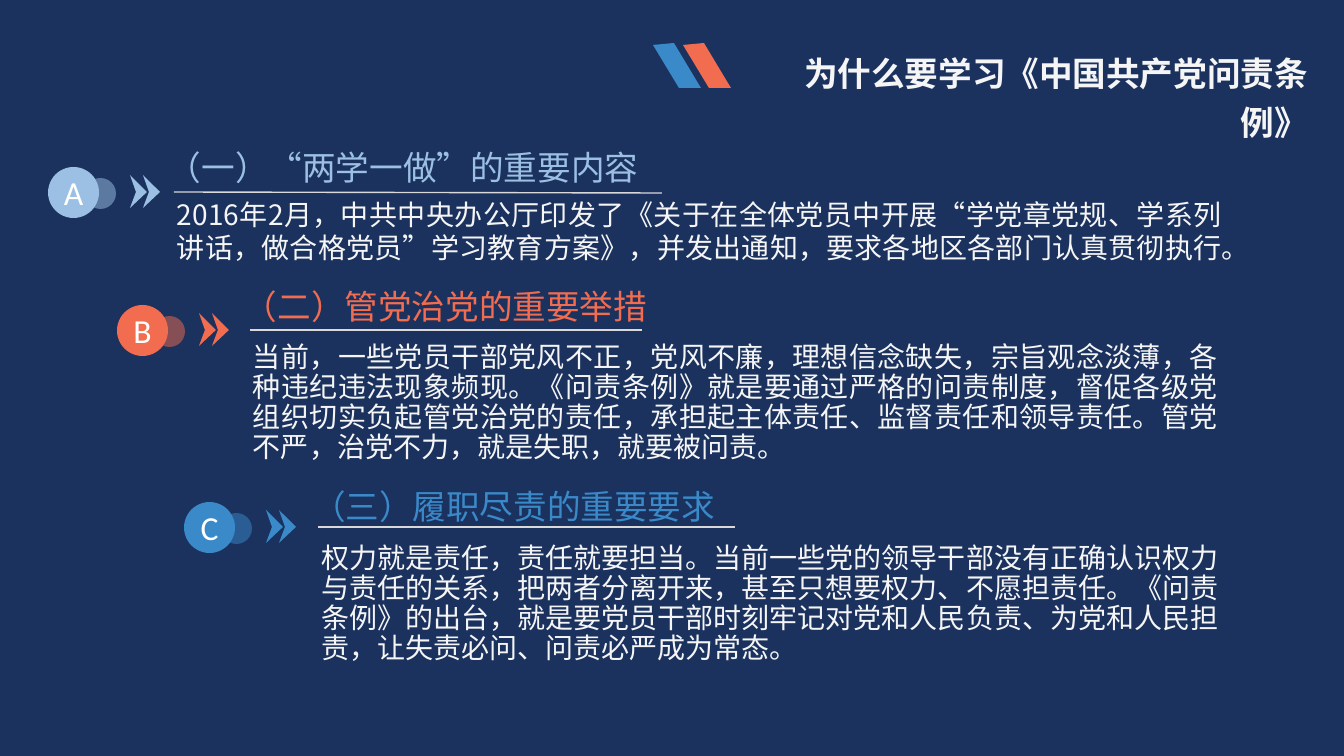
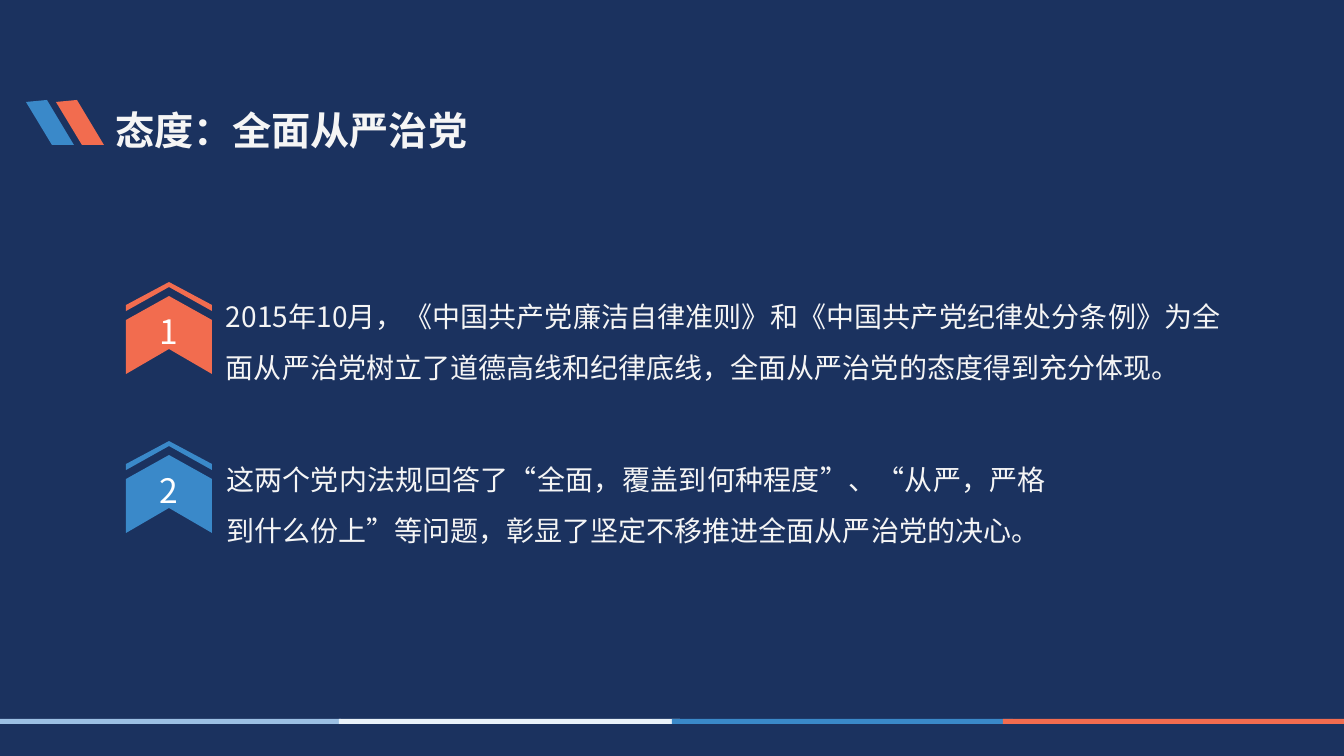
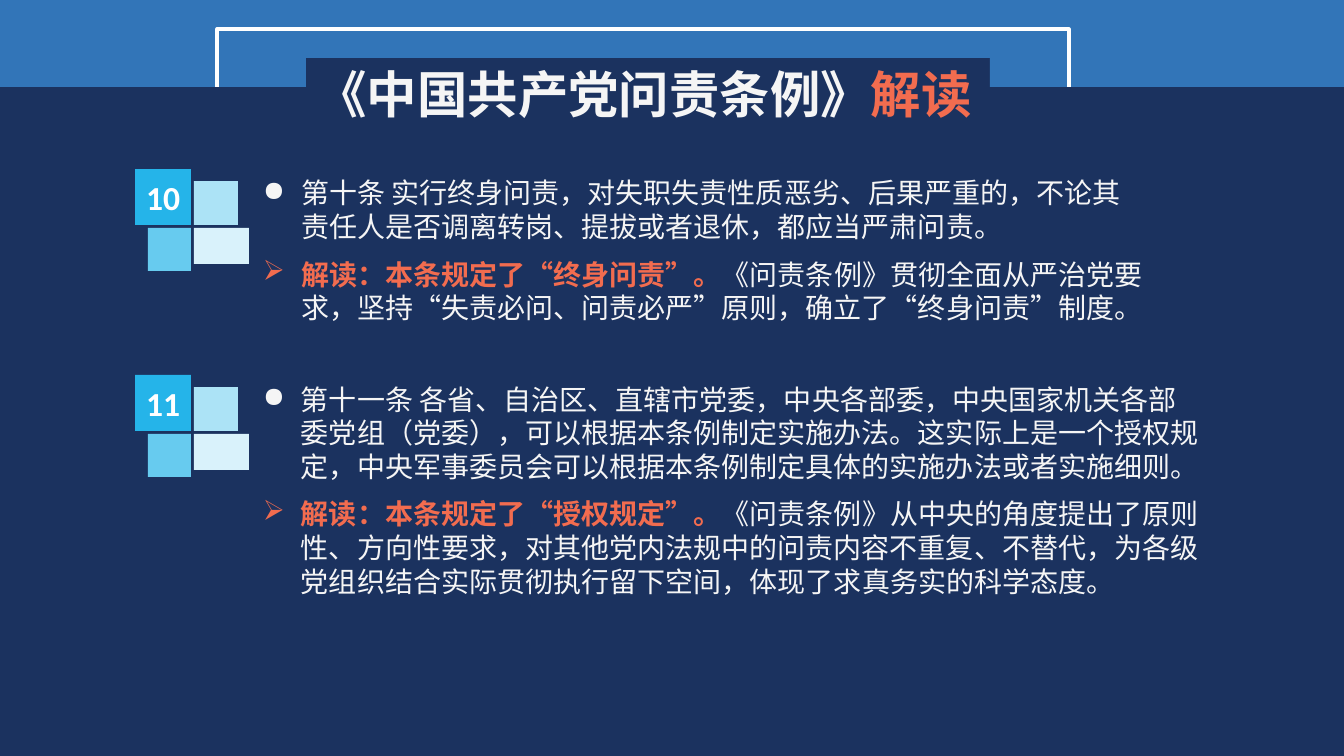
from lxml.etree import SubElement
from pptx import Presentation
from pptx.dml.color import RGBColor
from pptx.enum.shapes import MSO_CONNECTOR, MSO_SHAPE as SHAPE
from pptx.enum.text import MSO_ANCHOR as ANCHOR, PP_ALIGN as ALIGN
from pptx.oxml.ns import qn
from pptx.util import Pt

WIDTH, HEIGHT = 1344, 756
SCALE = 12192000 / WIDTH
COLORS = {
    "navy": "1B325F", "band": "3275B8", "pale": "9CC0E4", "ice": "E9F2F9",
    "blue": "3A89C9", "coral": "F26C4F", "text": "F5F5F5", "white": "FFFFFF",
    "rule": "D9D9D9", "tile1": "25B4E9", "tile2": "ACE3F6",
    "tile3": "67CBEF", "tile4": "D9F2FB",
}
LATIN, SANS, HEADING = "Calibri", "Noto Sans CJK SC", "Noto Sans CJK JP"


def emu(px):
    return round(px * SCALE)


def rgb(name):
    return RGBColor.from_string(COLORS[name])


class Deck:
    def __init__(self):
        self.presentation = Presentation()
        self.presentation.slide_width = emu(WIDTH)
        self.presentation.slide_height = emu(HEIGHT)
        self.slide = None

    def new_slide(self):
        self.slide = self.presentation.slides.add_slide(self.presentation.slide_layouts[6])
        fill = self.slide.background.fill
        fill.solid()
        fill.fore_color.rgb = rgb("navy")

    def paint(self, shape, color, alpha=None):
        shape.shadow.inherit = False
        shape.line.fill.background()
        shape.fill.solid()
        shape.fill.fore_color.rgb = rgb(color)
        if alpha:
            tint = shape.fill._xPr.find(qn("a:solidFill"))[0]
            SubElement(tint, qn("a:alpha")).set("val", str(alpha * 1000))
        return shape

    def shape(self, kind, x, y, w, h, color, alpha=None):
        shape = self.slide.shapes.add_shape(kind, emu(x), emu(y), emu(w), emu(h))
        return self.paint(shape, color, alpha)

    def outline(self, x, y, contours, close=True):
        builder = None
        for contour in contours:
            (left, top), *rest = [(x + dx, y + dy) for dx, dy in contour]
            if builder is None:
                builder = self.slide.shapes.build_freeform(left, top, SCALE)
            else:
                builder.move_to(left, top)
            builder.add_line_segments(rest, close=close)
        return builder.convert_to_shape()

    def polygon(self, x, y, color, *contours):
        return self.paint(self.outline(x, y, contours), color)

    def polyline(self, x, y, points, color, width):
        shape = self.outline(x, y, [points], close=False)
        shape.shadow.inherit = False
        shape.fill.background()
        shape.line.color.rgb = rgb(color)
        shape.line.width = Pt(width)

    def line(self, x1, y1, x2, y2):
        connector = self.slide.shapes.add_connector(
            MSO_CONNECTOR.STRAIGHT, emu(x1), emu(y1), emu(x2), emu(y2))
        connector.line.color.rgb = rgb("rule")
        connector.line.width = Pt(1)
        SubElement(connector._element.spPr, qn("a:effectLst"))

    def style(self, run, size, font, color, bold=False):
        run.font.size = Pt(size)
        run.font.bold = bold
        run.font.color.rgb = rgb(color)
        run.font.name = font
        properties = run._r.get_or_add_rPr()
        properties.set("lang", "zh-CN")
        SubElement(properties, qn("a:ea")).set("typeface", font)

    def label(self, shape, text, font, bold=False, insets=(0, 0, 0, 0)):
        frame = shape.text_frame
        self.set_insets(frame, insets)
        frame.vertical_anchor = ANCHOR.MIDDLE
        frame.text = text
        paragraph = frame.paragraphs[0]
        paragraph.alignment = ALIGN.CENTER
        self.style(paragraph.runs[0], 24, font, "white", bold)

    def set_insets(self, frame, insets):
        (frame.margin_left, frame.margin_top,
         frame.margin_right, frame.margin_bottom) = map(emu, insets)

    def box(self, x, y, w, h, insets=(0, 0, 0, 0), anchor=ANCHOR.TOP):
        shape = self.slide.shapes.add_textbox(emu(x), emu(y), emu(w), emu(h))
        frame = shape.text_frame
        frame.word_wrap = True
        frame.vertical_anchor = anchor
        self.set_insets(frame, insets)
        return frame

    def runs(self, paragraph, parts, size, font=SANS):
        for text, color, bold in parts:
            run = paragraph.add_run()
            run.text = text
            self.style(run, size, font, color, bold)

    def title(self, x, y, w, h, parts, size, align, anchor=ANCHOR.TOP):
        frame = self.box(x, y, w, h, (10, 5, 10, 5), anchor)
        paragraph = frame.paragraphs[0]
        paragraph.alignment = align
        paragraph.line_spacing = 1.2
        self.runs(paragraph, [(text, color, True) for text, color in parts], size)

    def body(self, x, y, w, h, text, spacing, align=ALIGN.JUSTIFY):
        paragraph = self.box(x, y, w, h).paragraphs[0]
        paragraph.alignment = align
        paragraph.line_spacing = spacing
        self.runs(paragraph, [(text, "text", False)], 20)

    def bullets(self, x, y, w, h, items):
        frame = self.box(x, y, w, h, (10, 5, 10, 5))
        for index, (mark, parts) in enumerate(items):
            paragraph = frame.add_paragraph() if index else frame.paragraphs[0]
            properties = paragraph._p.get_or_add_pPr()
            properties.set("marL", str(emu(38)))
            properties.set("indent", str(-emu(38)))
            if index:
                paragraph.space_before = Pt(10)
            SubElement(properties, qn("a:buChar")).set("char", mark)
            self.runs(paragraph, parts, 20)

    def slashes(self, x, y):
        for offset, color in ((0, "blue"), (30, "coral")):
            self.polygon(x + offset, y, color, [(21, 0), (48, 45), (26, 45), (0, 2)])

    def reason(self, letter, color, circle, heading, rule_end, body):
        x, y = circle
        self.shape(SHAPE.OVAL, x + 37, y + 11, 31, 31, color, alpha=50)
        self.label(self.shape(SHAPE.OVAL, x, y, 51, 51, color), letter, LATIN)
        chevrons = [[(dx + 17, 17), (dx, 0), (dx + 6, 17), (dx, 33)] for dx in (0, 13)]
        self.polygon(x + 82, y + 8, color, *chevrons)
        left, top, text = heading
        body_top, width, height, content, spacing, align = body
        self.body(left + 9, body_top, width, height, content, spacing, align)
        frame = self.box(left, top, 538, 59, anchor=ANCHOR.BOTTOM)
        self.runs(frame.paragraphs[0], [(text, color, False)], 24, HEADING)
        self.line(left + 6, y + 25, *rule_end)

    def bookmark(self, x, y, number, color):
        ribbon = self.polygon(x, y, color, [
            (43, 0), (0, 24), (0, 78), (43, 53), (86, 78), (86, 24)])
        self.label(ribbon, number, HEADING, insets=(10, 0, 10, 8))
        self.polygon(x, y - 14, color, [
            (43, 0), (0, 23), (0, 29), (43, 5), (86, 29), (86, 23)])

    def tiles(self, x, y, number):
        main = self.shape(SHAPE.RECTANGLE, x, y, 56, 56, "tile1")
        self.label(main, number, LATIN, bold=True, insets=(0, 5, 0, 5))
        for dx, dy, w, h, color in ((59, 12, 44, 44, "tile2"),
                                    (13, 59, 43, 43, "tile3"),
                                    (59, 59, 55, 36, "tile4")):
            self.shape(SHAPE.RECTANGLE, x + dx, y + dy, w, h, color)


def reasons_slide(deck):
    deck.new_slide()
    deck.reason("A", "pale", (48, 167), (168, 128, "（一）“两学一做”的重要内容"), (662, 193), (
        197, 1045, 66,
        "2016年2月，中共中央办公厅印发了《关于在全体党员中开展“学党章党规、学系列讲话，"
        "做合格党员”学习教育方案》，并发出通知，要求各地区各部门认真贯彻执行。",
        1.0, ALIGN.JUSTIFY))
    deck.reason("B", "coral", (117, 305), (244, 267, "（二）管党治党的重要举措"), (642, 330), (
        343, 965, 123,
        "当前，一些党员干部党风不正，党风不廉，理想信念缺失，宗旨观念淡薄，各种违纪违法现象频现。"
        "《问责条例》就是要通过严格的问责制度，督促各级党组织切实负起管党治党的责任，"
        "承担起主体责任、监督责任和领导责任。管党不严，治党不力，就是失职，就要被问责。",
        0.9, ALIGN.JUSTIFY))
    deck.reason("C", "blue", (184, 502), (312, 467, "（三）履职尽责的重要要求"), (735, 527), (
        544, 912, 140,
        "权力就是责任，责任就要担当。当前一些党的领导干部没有正确认识权力与责任的关系，"
        "把两者分离开来，甚至只想要权力、不愿担责任。《问责条例》的出台，"
        "就是要党员干部时刻牢记对党和人民负责、为党和人民担责，让失责必问、问责必严成为常态。",
        0.9, ALIGN.LEFT))
    deck.slashes(653, 43)
    deck.title(731, 40, 587, 59, [("为什么要学习《中国共产党问责条例》", "text")], 24, ALIGN.RIGHT)


def attitude_slide(deck):
    deck.new_slide()
    for x, color in ((0, "pale"), (339, "ice"), (672, "blue"), (1003, "coral")):
        deck.shape(SHAPE.RECTANGLE, x, 719, 341, 5, color)
    deck.bookmark(126, 296, "1", "coral")
    deck.bookmark(126, 455, "2", "blue")
    deck.body(226, 283, 995, 97,
              "2015年10月，《中国共产党廉洁自律准则》和《中国共产党纪律处分条例》"
              "为全面从严治党树立了道德高线和纪律底线，全面从严治党的态度得到充分体现。", 1.5)
    deck.body(226, 446, 820, 97,
              "这两个党内法规回答了“全面，覆盖到何种程度”、“从严，严格到什么份上”等问题，"
              "彰显了坚定不移推进全面从严治党的决心。", 1.5)
    deck.slashes(26, 100)
    deck.title(105, 92, 386, 68, [("态度：全面从严治党", "text")], 28, ALIGN.LEFT)


def articles_slide(deck):
    deck.new_slide()
    deck.polygon(0, 0, "band", [(0, 0), (WIDTH, 0), (WIDTH, 87), (990, 87),
                                (990, 58), (306, 58), (306, 87), (0, 87)])
    deck.polyline(217, 29, [(0, 58), (0, 0), (852, 0), (852, 58)], "white", 2.25)
    deck.title(294, 39, 700, 90, [("《中国共产党问责条例》", "text"), ("解读", "coral")],
               36, ALIGN.CENTER, ANCHOR.BOTTOM)
    articles = (
        ("10", 169, 900, 160,
         "第十条 实行终身问责，对失职失责性质恶劣、后果严重的，不论其责任人是否调离转岗、"
         "提拔或者退休，都应当严肃问责。",
         "解读：本条规定了“终身问责”。",
         "《问责条例》贯彻全面从严治党要求，坚持“失责必问、问责必严”原则，确立了“终身问责”制度。"),
        ("11", 375, 960, 228,
         "第十一条 各省、自治区、直辖市党委，中央各部委，中央国家机关各部委党组（党委），"
         "可以根据本条例制定实施办法。这实际上是一个授权规定，"
         "中央军事委员会可以根据本条例制定具体的实施办法或者实施细则。",
         "解读：本条规定了“授权规定”。",
         "《问责条例》从中央的角度提出了原则性、方向性要求，对其他党内法规中的问责内容不重复、"
         "不替代，为各级党组织结合实际贯彻执行留下空间，体现了求真务实的科学态度。"),
    )
    for number, y, width, height, article, lead, reading in articles:
        deck.tiles(135, y, number)
        deck.bullets(253, y + 2, width, height, [
            ("●", [(article, "text", False)]),
            ("➢", [(lead, "coral", True), (reading, "text", False)]),
        ])


def main():
    deck = Deck()
    reasons_slide(deck)
    attitude_slide(deck)
    articles_slide(deck)
    deck.presentation.save("out.pptx")


if __name__ == "__main__":
    main()
